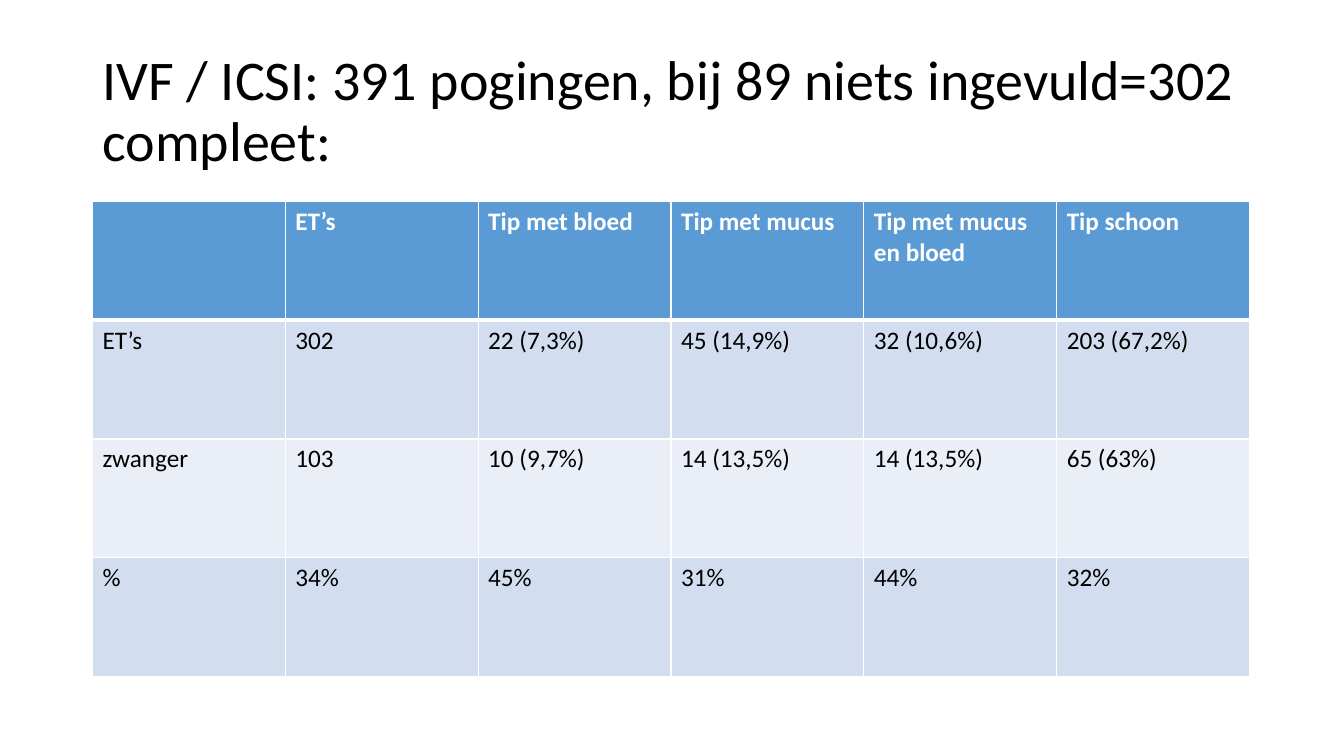
import pptx
import pptx.util
import pptx.dml.color
import pptx.enum.text
import pptx.oxml.ns
import lxml.etree

Cm = pptx.util.Cm
Pt = pptx.util.Pt

HEADING = "IVF / ICSI: 391 pogingen, bij 89 niets ingevuld=302 compleet:"
RESULTS = [
    ["", "ET’s", "Tip met bloed", "Tip met mucus", "Tip met mucus en bloed", "Tip schoon"],
    ["ET’s", "302", "22 (7,3%)", "45 (14,9%)", "32 (10,6%)", "203 (67,2%)"],
    ["zwanger", "103", "10 (9,7%)", "14 (13,5%)", "14 (13,5%)", "65 (63%)"],
    ["%", "34%", "45%", "31%", "44%", "32%"],
]
COLORS = {
    "header": "5B9BD5",
    "odd": "D2DEEF",
    "even": "EAEFF7",
    "border": "FFFFFF",
    "header_text": "FFFFFF",
    "text": "000000",
}
FONT = "Calibri"
LEFT = Cm(2.33)
COLUMN_WIDTH, ROW_HEIGHT = Cm(4.86), Cm(2.99)


def rgb(name):
    return pptx.dml.color.RGBColor.from_string(COLORS[name])


def write(frame, text, size=18, color="text", bold=False, spacing=1.0):
    paragraph = frame.paragraphs[0]
    paragraph.alignment = pptx.enum.text.PP_ALIGN.LEFT
    paragraph.line_spacing = spacing
    run = paragraph.add_run()
    run.text = text
    run.font.name = FONT
    run.font.size = Pt(size)
    run.font.bold = bold
    run.font.color.rgb = rgb(color)


def set_borders(cell, widths):
    qn = pptx.oxml.ns.qn
    properties = cell._tc.get_or_add_tcPr()
    for position, (side, width) in enumerate(widths.items()):
        line = lxml.etree.Element(qn(f"a:ln{side}"), w=str(Pt(width)))
        fill = lxml.etree.SubElement(line, qn("a:solidFill"))
        lxml.etree.SubElement(fill, qn("a:srgbClr"), val=COLORS["border"])
        properties.insert(position, line)


def main():
    presentation = pptx.Presentation()
    presentation.slide_width = Cm(33.87)
    presentation.slide_height = Cm(19.05)
    slide = presentation.slides.add_slide(presentation.slide_layouts[5])

    heading = slide.shapes.title
    heading.left, heading.top = LEFT, Cm(1.01)
    heading.width, heading.height = Cm(29.21), Cm(3.68)
    heading.text_frame.word_wrap = True
    heading.text_frame.auto_size = pptx.enum.text.MSO_AUTO_SIZE.NONE
    heading.text_frame.vertical_anchor = pptx.enum.text.MSO_ANCHOR.MIDDLE
    write(heading.text_frame, HEADING, size=40, spacing=0.9)

    row_count, column_count = len(RESULTS), len(RESULTS[0])
    results = slide.shapes.add_table(
        row_count, column_count, LEFT, Cm(5.08),
        COLUMN_WIDTH * column_count, ROW_HEIGHT * row_count,
    ).table
    for column in results.columns:
        column.width = COLUMN_WIDTH
    for row_index, values in enumerate(RESULTS):
        results.rows[row_index].height = ROW_HEIGHT
        is_header = row_index == 0
        band = "header" if is_header else ("even", "odd")[row_index % 2]
        borders = {"L": 1, "R": 1, "T": 3 if row_index == 1 else 1, "B": 3 if is_header else 1}
        for column_index, value in enumerate(values):
            cell = results.cell(row_index, column_index)
            cell.fill.solid()
            cell.fill.fore_color.rgb = rgb(band)
            set_borders(cell, borders)
            if value:
                write(cell.text_frame, value, bold=is_header,
                      color="header_text" if is_header else "text")

    presentation.save("out.pptx")


if __name__ == "__main__":
    main()
